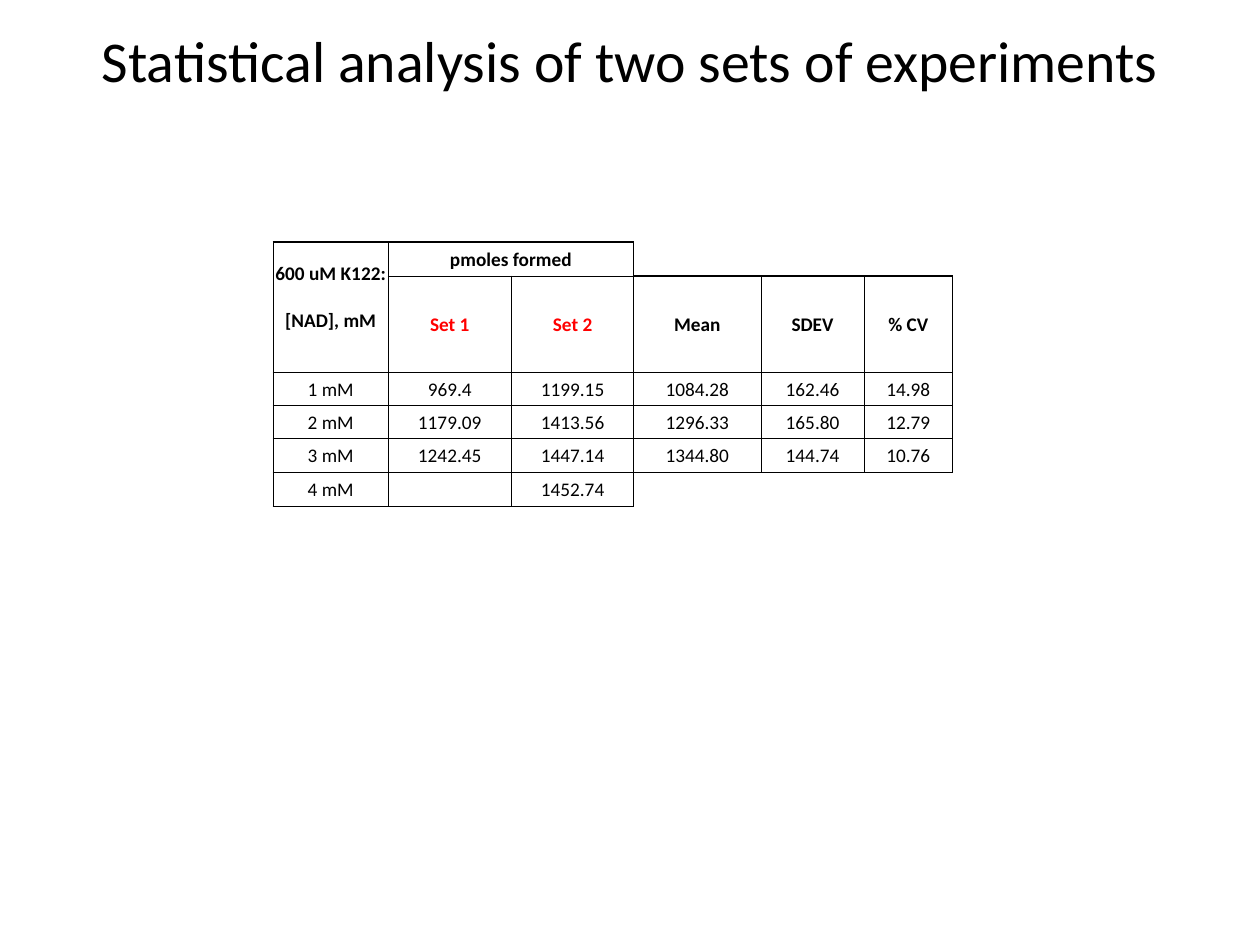
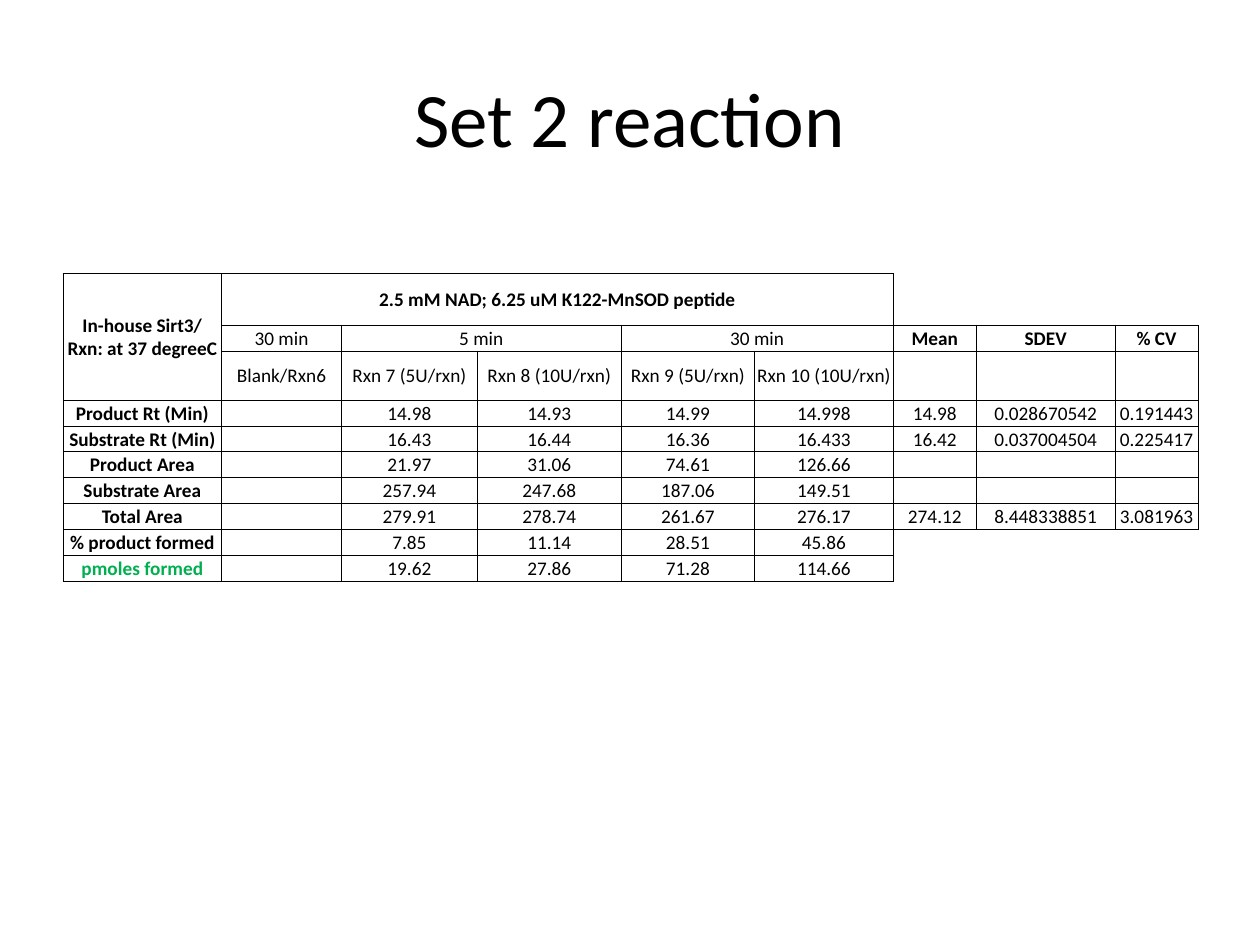
"""Build two slides of enzyme assay results, each a title over a ruled table."""
from dataclasses import dataclass

from lxml import etree
from pptx import Presentation
from pptx import util as u
from pptx.dml.color import RGBColor
from pptx.enum import text
from pptx.oxml.ns import qn


@dataclass(frozen=True)
class Theme:
    """Colours, font, type sizes and line widths shared by the slides."""
    font: str = "Calibri"
    ink: str = "000000"
    red: str = "FF0000"
    green: str = "00B050"
    head: int = 44
    small: int = 33
    body: int = 11
    gap: float = 13.4
    thin: float = 0.5
    thick: float = 1
    plain: str = "{2D5ABB26-0587-4C30-8999-92F81FD0307C}"


T = Theme()

SETS = [
    ["600 uM K122:\n[NAD], mM", "pmoles formed", "", "", "", ""],
    ["", "Set 1", "Set 2", "Mean", "SDEV", "% CV"],
    ["1 mM", "969.4", "1199.15", "1084.28", "162.46", "14.98"],
    ["2 mM", "1179.09", "1413.56", "1296.33", "165.80", "12.79"],
    ["3 mM", "1242.45", "1447.14", "1344.80", "144.74", "10.76"],
    ["4 mM", "", "1452.74", "", "", ""],
]

RUNS = [
    ["In-house Sirt3/ Rxn: at 37 degreeC",
     "2.5 mM NAD; 6.25 uM K122-MnSOD peptide", "", "", "", "", "", "", ""],
    [""] * 9,
    ["", "30 min", "5 min", "", "30 min", "", "Mean", "SDEV", "% CV"],
    ["", "Blank/Rxn6", "Rxn 7 (5U/rxn)", "Rxn 8 (10U/rxn)",
     "Rxn 9 (5U/rxn)", "Rxn 10 (10U/rxn)", "", "", ""],
    ["Product Rt (Min)", "", "14.98", "14.93", "14.99", "14.998",
     "14.98", "0.028670542", "0.191443"],
    ["Substrate Rt (Min)", "", "16.43", "16.44", "16.36", "16.433",
     "16.42", "0.037004504", "0.225417"],
    ["Product Area", "", "21.97", "31.06", "74.61", "126.66", "", "", ""],
    ["Substrate Area", "", "257.94", "247.68", "187.06", "149.51", "", "", ""],
    ["Total Area", "", "279.91", "278.74", "261.67", "276.17",
     "274.12", "8.448338851", "3.081963"],
    ["% product formed", "", "7.85", "11.14", "28.51", "45.86", "", "", ""],
    ["pmoles formed", "", "19.62", "27.86", "71.28", "114.66", "", "", ""],
]


def style(para, size, color=T.ink, bold=False):
    """Centre a paragraph and format its runs."""
    para.alignment = text.PP_ALIGN.CENTER
    for run in para.runs:
        font = run.font
        font.name, font.size, font.bold = T.font, u.Pt(size), bold
        font.color.rgb = RGBColor.from_string(color)
    if not para.runs:
        etree.SubElement(para._p, qn("a:endParaRPr"), sz=str(size * 100))


def add_title(slide, box, words, size):
    """Place the title in its box."""
    title = slide.shapes.title
    title.left, title.top, title.width, title.height = map(u.Inches, box)
    frame = title.text_frame
    frame.text = words
    frame.word_wrap = True
    frame.vertical_anchor = text.MSO_ANCHOR.MIDDLE
    style(frame.paragraphs[0], size)


def rule(cell, side, width):
    """Draw one edge of a cell."""
    line = etree.SubElement(cell._tc.get_or_add_tcPr(), qn(f"a:ln{side}"),
                            w=str(u.Pt(width)))
    fill = etree.SubElement(line, qn("a:solidFill"))
    etree.SubElement(fill, qn("a:srgbClr"), val=T.ink)


def edge(cell, row, col, blocks, rim):
    """Rule a cell that lies in a block, with the rim width at block borders."""
    for top, left, low, right in blocks:
        if top <= row <= low and left <= col <= right:
            ends = {"L": col == left,
                    "R": col + cell.span_width - 1 == right,
                    "T": row == top,
                    "B": row + cell.span_height - 1 == low}
            for side, outer in ends.items():
                rule(cell, side, rim if outer else T.thin)


def fill_cell(cell, words, color, bold):
    """Write and format the text of a cell."""
    cell.fill.background()
    cell.margin_left = cell.margin_right = cell.margin_top = u.Inches(0.01)
    cell.margin_bottom = 0
    cell.vertical_anchor = text.MSO_ANCHOR.MIDDLE
    cell.text_frame.text = words
    for i, para in enumerate(cell.text_frame.paragraphs):
        style(para, T.body, color, bold)
        if i:
            para.space_before = u.Pt(T.gap)


def add_grid(slide, spot, data, cols, rows, spans, blocks, rim, tints, bold):
    """Place a ruled table at a spot and return it."""
    size = sum(cols), sum(rows)
    frame = slide.shapes.add_table(len(rows), len(cols),
                                   *map(u.Inches, (*spot, *size)))
    grid = frame.table
    grid.first_row = grid.horz_banding = False
    grid._tbl.tblPr.find(qn("a:tableStyleId")).text = T.plain
    for col, width in zip(grid.columns, cols):
        col.width = u.Inches(width)
    for row, height in zip(grid.rows, rows):
        row.height = u.Inches(height)
    for top, left, low, right in spans:
        grid.cell(top, left).merge(grid.cell(low, right))
    for r, line in enumerate(data):
        for c, words in enumerate(line):
            cell = grid.cell(r, c)
            edge(cell, r, c, blocks, rim)
            fill_cell(cell, words, tints.get(words, T.ink), bold(r, c))
    return grid


def sets_slide(slide):
    """Fill the slide that compares both sets."""
    add_title(slide, (0.5, 0.08, 9, 0.78),
              "Statistical analysis of two sets of experiments", T.small)
    grid = add_grid(
        slide, (2.17, 1.92), SETS,
        cols=[0.91, 0.98, 0.97, 1.01, 0.82, 0.7],
        rows=[0.27, 0.77, 0.26, 0.26, 0.27, 0.27],
        spans=[(0, 0, 1, 0), (0, 1, 0, 2)],
        blocks=[(0, 0, 5, 2), (1, 3, 4, 5)], rim=T.thick,
        tints={"Set 1": T.red, "Set 2": T.red},
        bold=lambda r, c: r < 2)
    grid.cell(0, 0).margin_bottom = u.Inches(0.17)


def runs_slide(slide):
    """Fill the slide with the runs of set 2."""
    add_title(slide, (0.5, 0.3, 9, 1.25), "Set 2 reaction", T.head)
    step = 2.26 / len(RUNS)
    add_grid(
        slide, (0.5, 2.17), RUNS,
        cols=[1.26, 0.95, 1.08, 1.14, 1.06, 1.1, 0.66, 1.1, 0.66],
        rows=[0.39 if r == 3 else step for r in range(len(RUNS))],
        spans=[(0, 0, 3, 0), (0, 1, 1, 5), (2, 2, 2, 3), (2, 4, 2, 5)],
        blocks=[(0, 0, 10, 5), (2, 6, 8, 8)], rim=T.thin,
        tints={"pmoles formed": T.green},
        bold=lambda r, c: c == 0 or r == 0 or (r == 2 and c > 5))


def main():
    """Build and save the deck."""
    deck = Presentation()
    deck.slide_width, deck.slide_height = u.Inches(10), u.Inches(7.5)
    for build in (sets_slide, runs_slide):
        build(deck.slides.add_slide(deck.slide_layouts[5]))
    deck.save("out.pptx")


if __name__ == "__main__":
    main()
